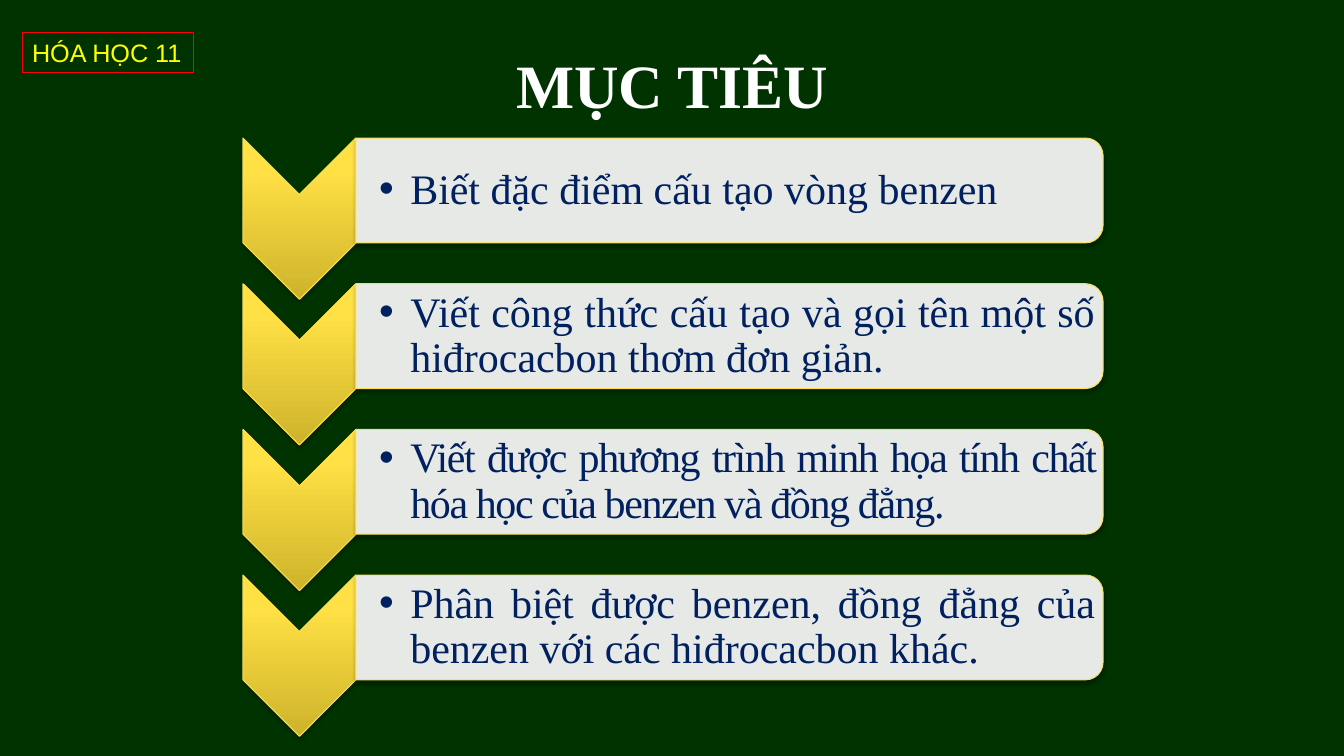
import pptx
import pptx.util
import pptx.dml.color
import pptx.enum.shapes
import pptx.enum.text
import pptx.oxml
import pptx.oxml.ns

Inches, Pt = pptx.util.Inches, pptx.util.Pt
RGBColor = pptx.dml.color.RGBColor
Shape = pptx.enum.shapes.MSO_SHAPE
Align = pptx.enum.text.PP_ALIGN
Anchor = pptx.enum.text.MSO_ANCHOR

DARK_GREEN = RGBColor(0x00, 0x33, 0x00)
WHITE = RGBColor(0xFF, 0xFF, 0xFF)
RED = RGBColor(0xFF, 0x00, 0x00)
YELLOW = RGBColor(0xFF, 0xFF, 0x00)
GOLD = RGBColor(0xFB, 0xDF, 0x53)
NAVY = RGBColor(0x00, 0x20, 0x60)
GOLD_STOPS = ((0, RGBColor(0xCE, 0xB3, 0x2B)), (80, RGBColor(0xFF, 0xE0, 0x45)),
              (100, RGBColor(0xFF, 0xE0, 0x46)))

SLIDE_W, SLIDE_H = 13.33, 7.5
ROW_PITCH = 1.445
CHEVRON_W, CHEVRON_H = 1.12, 1.6
BAR_H = 1.04

# Each objective with its letter spacing in points
OBJECTIVES = (
    ("Biết đặc điểm cấu tạo vòng benzen", 0),
    ("Viết công thức cấu tạo và gọi tên một số hiđrocacbon thơm đơn giản.", 0),
    ("Viết được phương trình minh họa tính chất hóa học của benzen và đồng đẳng.", -1),
    ("Phân biệt được benzen, đồng đẳng của benzen với các hiđrocacbon khác.", 0),
)


def xml(markup):
    head, rest = markup.split(" ", 1)
    return pptx.oxml.parse_xml(f"{head} {pptx.oxml.ns.nsdecls('a')} {rest}")


def set_font(paragraph, name, size, color, bold=False):
    font = paragraph.font
    font.name, font.size, font.bold = name, Pt(size), bold
    font.color.rgb = color


def add_title(slide, left, top, width, height):
    title = slide.shapes.add_textbox(Inches(left), Inches(top), Inches(width), Inches(height))
    title.text_frame.word_wrap = False
    paragraph = title.text_frame.paragraphs[0]
    paragraph.text = "MỤC TIÊU"
    paragraph.alignment = Align.CENTER
    paragraph.space_before = Pt(5)
    set_font(paragraph, "Times New Roman", 44, WHITE, bold=True)


def add_subject_label(slide, left, top, width, height):
    label = slide.shapes.add_shape(
        Shape.RECTANGLE, Inches(left), Inches(top), Inches(width), Inches(height))
    label.shadow.inherit = False
    label.fill.background()
    label.line.color.rgb = RED
    label.line.width = Pt(0.75)
    label.text_frame.word_wrap = False
    paragraph = label.text_frame.paragraphs[0]
    paragraph.text = "HÓA HỌC 11"
    paragraph.alignment = Align.LEFT
    set_font(paragraph, "Arial", 18, YELLOW)


def add_turned_shape(shapes, kind, left, top, width, height):
    """Place a gold-edged, shadowed shape so that it fills the box after a quarter turn."""
    shape = shapes.add_shape(
        kind, Inches(left + (width - height) / 2), Inches(top + (height - width) / 2),
        Inches(height), Inches(width))
    shape.rotation = 90
    shape.line.color.rgb = GOLD
    shape.line.width = Pt(0.75)
    shape.shadow.inherit = False
    effects = shape._element.spPr.find(pptx.oxml.ns.qn("a:effectLst"))
    effects.append(xml(
        f'<a:outerShdw blurRad="{Pt(3.1)}" dist="{Pt(1.8)}" dir="5400000" rotWithShape="0">'
        '<a:srgbClr val="000000"><a:alpha val="35000"/></a:srgbClr></a:outerShdw>'))
    return shape


def add_chevron(shapes, left, top):
    chevron = add_turned_shape(shapes, Shape.CHEVRON, left, top, CHEVRON_W, CHEVRON_H)
    stops = "".join(f'<a:gs pos="{share * 1000}"><a:srgbClr val="{color}"/></a:gs>'
                    for share, color in GOLD_STOPS)
    chevron._element.spPr.find(pptx.oxml.ns.qn("a:prstGeom")).addnext(xml(
        f'<a:gradFill rotWithShape="0"><a:gsLst>{stops}</a:gsLst>'
        '<a:lin ang="16200000" scaled="0"/></a:gradFill>'))


def add_bar(shapes, left, top, width):
    bar = add_turned_shape(shapes, Shape.ROUND_2_SAME_RECTANGLE, left, top, width, BAR_H)
    bar.fill.solid()
    bar.fill.fore_color.rgb = WHITE
    color = bar._element.spPr.find(".//" + pptx.oxml.ns.qn("a:srgbClr"))
    color.append(xml('<a:alpha val="90000"/>'))


def add_objective_text(shapes, text, spacing, left, top, width, height):
    box = shapes.add_textbox(Inches(left), Inches(top), Inches(width), Inches(height))
    frame = box.text_frame
    frame.word_wrap = True
    frame.vertical_anchor = Anchor.MIDDLE
    frame.margin_left = Inches(0.23)
    frame.margin_top = frame.margin_right = frame.margin_bottom = Inches(0.02)
    paragraph = frame.paragraphs[0]
    paragraph.text = text
    paragraph.level = 1
    paragraph.alignment = Align.JUSTIFY
    paragraph.line_spacing = 0.9
    paragraph.space_after = Pt(4.5)
    properties = paragraph._p.get_or_add_pPr()
    properties.set("marL", str(Inches(0.31)))
    properties.set("indent", str(-Inches(0.31)))
    properties.append(xml('<a:buFont typeface="Arial"/>'))
    properties.append(xml('<a:buChar char="•"/>'))
    set_font(paragraph, "Times New Roman", 30, NAVY)
    if spacing:
        paragraph.runs[0]._r.get_or_add_rPr().set("spc", str(spacing * 100))


def add_objectives(slide, left, top, width):
    shapes = slide.shapes.add_group_shape().shapes
    bar_left, bar_width = left + CHEVRON_W, width - CHEVRON_W
    for row, (text, spacing) in enumerate(OBJECTIVES):
        row_top = top + row * ROW_PITCH
        add_chevron(shapes, left, row_top)
        add_bar(shapes, bar_left, row_top, bar_width)
        add_objective_text(shapes, text, spacing, bar_left, row_top + 0.05,
                           bar_width - 0.05, BAR_H - 0.1)


def main():
    deck = pptx.Presentation()
    deck.slide_width, deck.slide_height = Inches(SLIDE_W), Inches(SLIDE_H)
    slide = deck.slides.add_slide(deck.slide_layouts[6])
    slide.background.fill.solid()
    slide.background.fill.fore_color.rgb = DARK_GREEN
    add_title(slide, 5, 0.42, 3.34, 0.84)
    add_subject_label(slide, 0.22, 0.32, 1.7, 0.4)
    add_objectives(slide, 2.41, 1.37, 8.53)
    deck.save("out.pptx")


if __name__ == "__main__":
    main()
